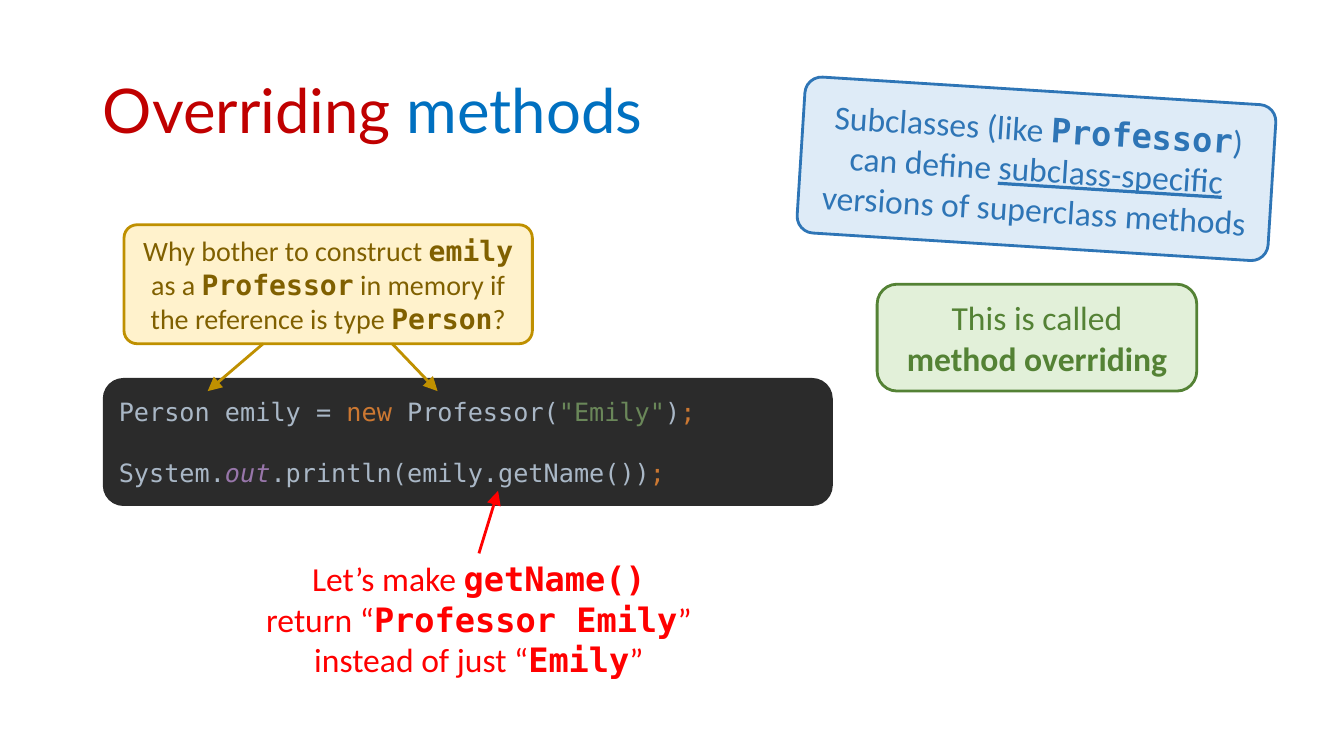
"""Build the slide on overriding methods."""
from lxml import etree
from pptx import Presentation
from pptx.dml.color import RGBColor
from pptx.enum import shapes, text
from pptx.oxml import ns
from pptx.util import Inches, Pt

COLORS = {
    "title_red": "C00000", "title_blue": "0070C0", "red": "FF0000",
    "gold": "BF9000", "gold_fill": "FFF2CC", "gold_text": "806000",
    "blue": "2E75B6", "blue_fill": "DEEBF7",
    "green": "548235", "green_fill": "E2F0D9",
    "code_fill": "2B2B2B", "code": "A9B7C6", "keyword": "CC7832",
    "string": "6A8759", "field": "9876AA",
}
MONO = "DejaVu Sans Mono"


def add_run(paragraph, words, font, size, color, bold=False, italic=False, underline=False):
    """Append one formatted run to the paragraph."""
    run = paragraph.add_run()
    run.text = words
    run.font.name = font
    run.font.size = Pt(size)
    run.font.color.rgb = RGBColor.from_string(COLORS[color])
    run.font.bold = bold
    run.font.italic = italic
    run.font.underline = underline


def fill_callout(shape, size, color, lines):
    """Write centred lines of (words, style) runs into the shape."""
    frame = shape.text_frame
    frame.word_wrap = True
    for index, line in enumerate(lines):
        paragraph = frame.paragraphs[0] if index == 0 else frame.add_paragraph()
        paragraph.alignment = text.PP_ALIGN.CENTER
        for words, style in line:
            add_run(paragraph, words, MONO if style == "mono" else "Calibri", size, color,
                    bold=style in ("mono", "bold"), underline=style == "underline")


presentation = Presentation()
presentation.slide_width = Inches(13.33)
presentation.slide_height = Inches(7.5)
slide = presentation.slides.add_slide(presentation.slide_layouts[5])

title = slide.shapes.title
title.left, title.top = Inches(0.92), Inches(0.4)
title.width, title.height = Inches(6.14), Inches(1.45)
title.text_frame.vertical_anchor = text.MSO_ANCHOR.MIDDLE
title_paragraph = title.text_frame.paragraphs[0]
title_paragraph.alignment = text.PP_ALIGN.LEFT
title_paragraph.line_spacing = 0.9
add_run(title_paragraph, "Overriding ", "Lato", 44, "title_red")
add_run(title_paragraph, "methods", "Lato", 44, "title_blue")

boxes = {}
for name, left, top, width, height, corner, rotation, fill, line in [
    ("code", 1.02, 3.75, 7.24, 1.27, 0.161, 0, "code_fill", None),
    ("question", 1.23, 2.23, 4.05, 1.18, 0.11, 0, "gold_fill", "gold"),
    ("subclasses", 7.94, 0.9, 4.68, 1.55, 0.107, 3.6, "blue_fill", "blue"),
    ("term", 8.7, 2.82, 3.17, 1.06, 0.186, 0, "green_fill", "green"),
]:
    box = slide.shapes.add_shape(shapes.MSO_SHAPE.ROUNDED_RECTANGLE,
                                 Inches(left), Inches(top), Inches(width), Inches(height))
    box.shadow.inherit = False
    box.adjustments[0] = corner
    box.rotation = rotation
    box.fill.solid()
    box.fill.fore_color.rgb = RGBColor.from_string(COLORS[fill])
    if line:
        box.line.color.rgb = RGBColor.from_string(COLORS[line])
        box.line.width = Pt(2)
    else:
        box.line.fill.background()
    box.text_frame.vertical_anchor = text.MSO_ANCHOR.MIDDLE
    boxes[name] = box

code_frame = boxes["code"].text_frame
code_frame.word_wrap = True
code_lines = [
    [("Person emily = ", "code"), ("new ", "keyword"), ("Professor(", "code"),
     ("\"Emily\"", "string"), (")", "code"), (";", "keyword")],
    [("System.", "code"), ("out", "field"), (".println(emily.getName())", "code"),
     (";", "keyword")],
]
for index, code_line in enumerate(code_lines):
    paragraph = code_frame.paragraphs[0] if index == 0 else code_frame.add_paragraph()
    paragraph.alignment = text.PP_ALIGN.LEFT
    paragraph.space_before = Pt(21.5 * index)
    for words, color in code_line:
        add_run(paragraph, words, MONO, 18, color, italic=color == "field")

fill_callout(boxes["question"], 20, "gold_text", [
    [("Why bother to construct ", "plain"), ("emily", "mono"), (" as a ", "plain"),
     ("Professor", "mono"), (" in memory if the reference is type ", "plain"),
     ("Person", "mono"), ("?", "plain")],
])
fill_callout(boxes["subclasses"], 24, "blue", [
    [("Subclasses (like ", "plain"), ("Professor", "mono"), (") can define ", "plain"),
     ("subclass-specific", "underline"), (" versions of superclass methods", "plain")],
])
fill_callout(boxes["term"], 24, "green", [
    [("This is called", "plain")],
    [("method overriding", "bold")],
])

task = slide.shapes.add_textbox(Inches(2.35), Inches(5.49), Inches(4.8), Inches(1.31))
fill_callout(task, 24, "red", [
    [("Let’s make ", "plain"), ("getName()", "mono")],
    [("return “", "plain"), ("Professor Emily", "mono"), ("”", "plain")],
    [("instead of just “", "plain"), ("Emily", "mono"), ("”", "plain")],
])

for start_x, start_y, end_x, end_y, color in [
    (4.75, 5.49, 4.94, 4.87, "red"),
    (2.61, 3.41, 2.06, 3.88, "gold"),
    (3.89, 3.41, 4.34, 3.88, "gold"),
]:
    arrow = slide.shapes.add_connector(shapes.MSO_CONNECTOR.STRAIGHT, Inches(start_x),
                                       Inches(start_y), Inches(end_x), Inches(end_y))
    arrow.line.color.rgb = RGBColor.from_string(COLORS[color])
    arrow.line.width = Pt(2)
    etree.SubElement(arrow.line._get_or_add_ln(), ns.qn("a:tailEnd"),
                     type="triangle", w="lg", len="lg")
    etree.SubElement(arrow._element.spPr, ns.qn("a:effectLst"))

presentation.save("out.pptx")
